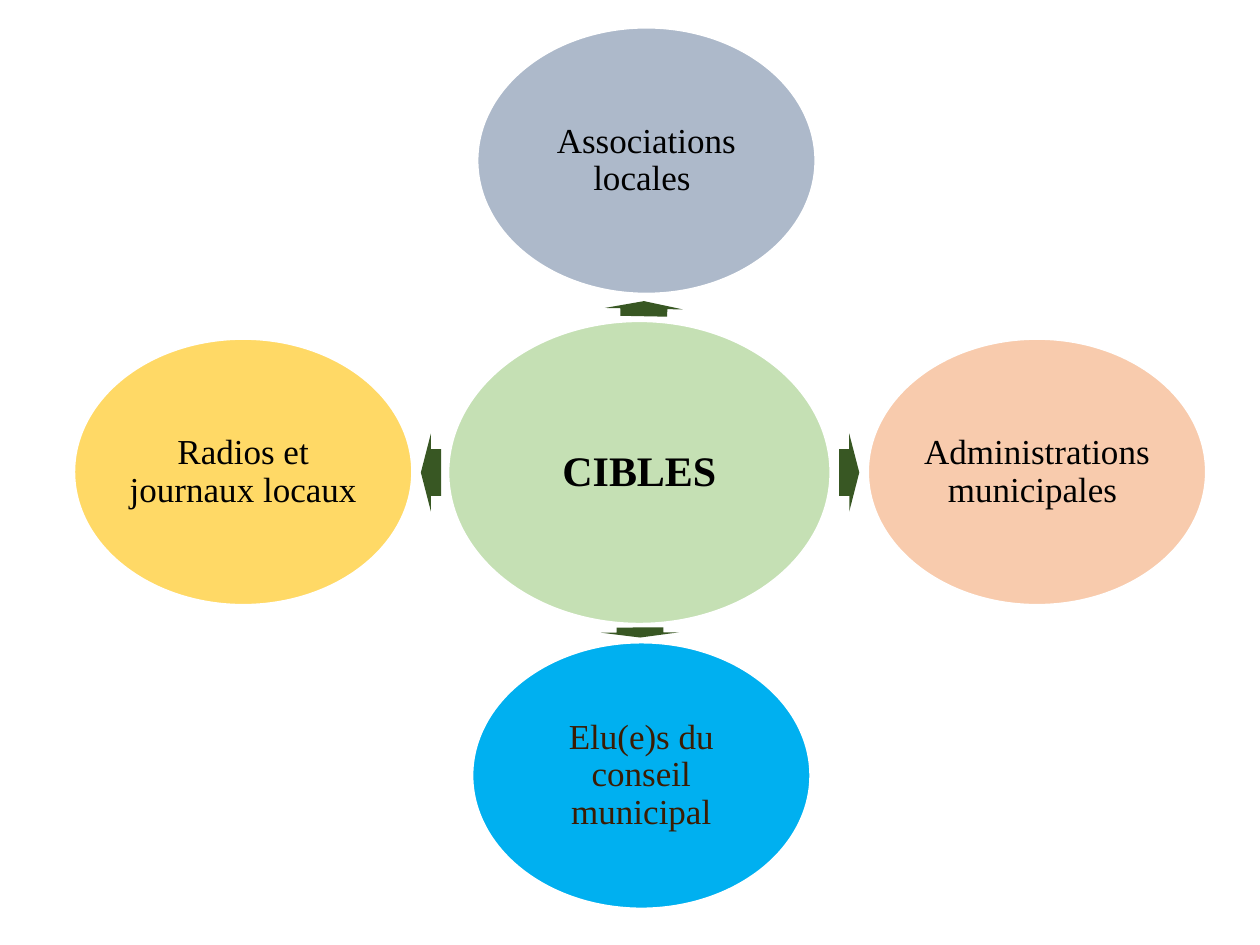
from pptx import Presentation
from pptx.dml.color import RGBColor
from pptx.enum.shapes import MSO_SHAPE as Shape
from pptx.enum.text import MSO_ANCHOR as Anchor, PP_ALIGN as Align
from pptx.util import Inches, Pt


def color(value):
    return RGBColor.from_string(value)


class Diagram:
    """Draws circles and arrows on one page in a shared style."""

    font_name = "Times New Roman"
    arrow_fill = "385723"
    outline = "FFFFFF"
    inset = Inches(0.03)

    def __init__(self, page):
        self.page = page

    def shape(self, kind, left, top, width, height, fill):
        shape = self.page.shapes.add_shape(
            kind, Inches(left), Inches(top), Inches(width), Inches(height))
        shape.shadow.inherit = False
        shape.fill.solid()
        shape.fill.fore_color.rgb = color(fill)
        return shape

    def circle(self, text, left, top, width, height, fill,
               ink="000000", size=20, bold=False):
        circle = self.shape(Shape.OVAL, left, top, width, height, fill)
        circle.line.color.rgb = color(self.outline)
        circle.line.width = Pt(1)
        frame = circle.text_frame
        settings = {"word_wrap": True, "vertical_anchor": Anchor.MIDDLE}
        for side in ("left", "top", "right", "bottom"):
            settings[f"margin_{side}"] = self.inset
        for name, value in settings.items():
            setattr(frame, name, value)
        para = frame.paragraphs[0]
        para.alignment = Align.CENTER
        para.line_spacing = 0.9
        span = para.add_run()
        span.text = text
        style = {"name": self.font_name, "size": Pt(size), "bold": bold}
        for name, value in style.items():
            setattr(span.font, name, value)
        span.font.color.rgb = color(ink)

    def arrow(self, left, top, length, rotation):
        arrow = self.shape(Shape.RIGHT_ARROW, left, top, length, 0.62, self.arrow_fill)
        arrow.line.fill.background()
        arrow.adjustments[0] = 0.6
        arrow.adjustments[1] = 0.5
        arrow.rotation = rotation


def main():
    deck = Presentation()
    deck.slide_width, deck.slide_height = Inches(10), Inches(7.5)
    diagram = Diagram(deck.slides.add_slide(deck.slide_layouts[6]))

    diagram.circle("CIBLES", 3.56, 2.55, 3.03, 2.4, "C5E0B4", size=24, bold=True)
    targets = [
        ("Associations locales ", 3.79, 0.22, "ADB9CA", "000000", (5.05, 2.14, 0.12, 271.1)),
        ("Administrations municipales ", 6.89, 2.69, "F8CBAD", "000000", (6.66, 3.44, 0.16, 359.9)),
        ("Elu(e)s du conseil municipal", 3.75, 5.1, "00B0F0", "3B1C03", (5.04, 4.71, 0.08, 89.7)),
        ("Radios et journaux locaux", 0.59, 2.69, "FFD966", "000000", (3.34, 3.44, 0.16, 180)),
    ]
    for text, left, top, fill, ink, arrow in targets:
        diagram.arrow(*arrow)
        diagram.circle(text, left, top, 2.68, 2.11, fill, ink)

    deck.save("out.pptx")


if __name__ == "__main__":
    main()
